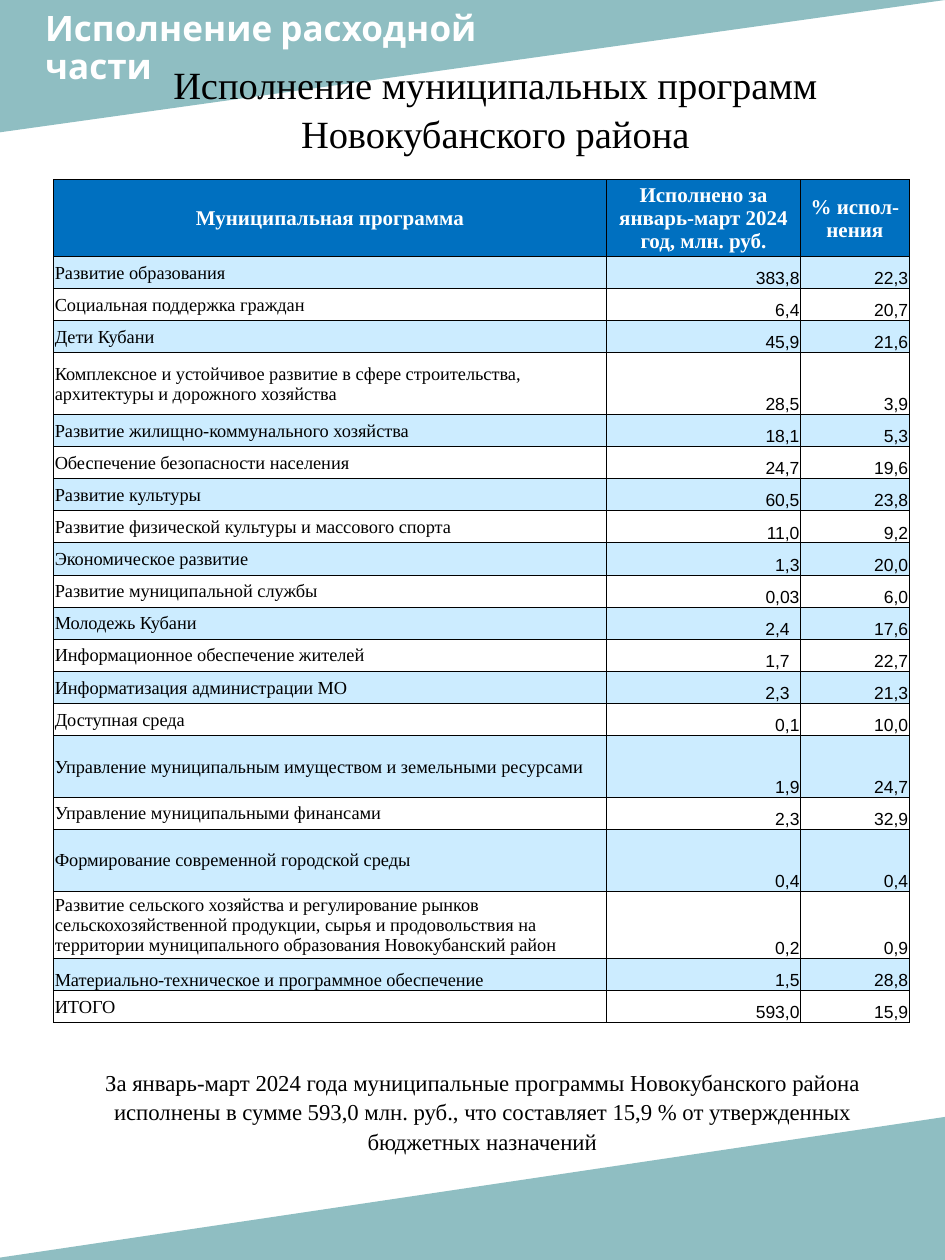
from lxml import etree
from pptx import Presentation
from pptx.dml.color import RGBColor
from pptx.enum import shapes, text
from pptx.oxml import ns
from pptx.util import Pt

TEAL = RGBColor(0x51, 0x9A, 0xA0)
BLUE = RGBColor(0x00, 0x70, 0xC0)
PALE_BLUE = RGBColor(0xCC, 0xEC, 0xFF)
WHITE = RGBColor(0xFF, 0xFF, 0xFF)
BLACK = RGBColor(0x00, 0x00, 0x00)

SERIF, SANS, HEADING = "Times New Roman", "Arial", "Cabin"
LEFT, CENTER, RIGHT = text.PP_ALIGN.LEFT, text.PP_ALIGN.CENTER, text.PP_ALIGN.RIGHT
MIDDLE, BOTTOM = text.MSO_ANCHOR.MIDDLE, text.MSO_ANCHOR.BOTTOM

COLUMN_WIDTHS = [316, 110.9, 62.1]
HEADER_HEIGHT, ROW_HEIGHT, TALL_HEIGHT, THREE_LINE_HEIGHT = 43.2, 18.35, 35.3, 38.2
CELL_MARGIN, INDENTED_MARGIN = 0.7, 6.3

HEADERS = [
    "Муниципальная программа",
    "Исполнено за январь-март 2024 год, млн. руб.",
    "% испол-нения",
]
PROGRAMS = [
    ("Развитие образования", "383,8", "22,3"),
    ("Социальная поддержка граждан", "6,4", "20,7"),
    ("Дети Кубани", "45,9", "21,6"),
    ("Комплексное и устойчивое развитие в сфере строительства, "
     "архитектуры и дорожного хозяйства", "28,5", "3,9"),
    ("Развитие жилищно-коммунального хозяйства", "18,1", "5,3"),
    ("Обеспечение безопасности населения", "24,7", "19,6"),
    ("Развитие культуры", "60,5", "23,8"),
    ("Развитие физической культуры и массового спорта", "11,0", "9,2"),
    ("Экономическое развитие", "1,3", "20,0"),
    ("Развитие муниципальной службы", "0,03", "6,0"),
    ("Молодежь Кубани", "2,4", "17,6"),
    ("Информационное обеспечение жителей", "1,7", "22,7"),
    ("Информатизация администрации МО", "2,3", "21,3"),
    ("Доступная среда", "0,1", "10,0"),
    ("Управление муниципальным имуществом и земельными ресурсами", "1,9", "24,7"),
    ("Управление муниципальными финансами", "2,3", "32,9"),
    ("Формирование современной городской среды", "0,4", "0,4"),
    ("Развитие сельского хозяйства и регулирование рынков сельскохозяйственной "
     "продукции, сырья и продовольствия на территории муниципального "
     "образования Новокубанский район", "0,2", "0,9"),
    ("Материально-техническое и программное обеспечение", "1,5", "28,8"),
    ("ИТОГО", "593,0", "15,9"),
]
# Table row numbers that differ from the rest
SPECIAL_HEIGHTS = {0: HEADER_HEIGHT, 4: TALL_HEIGHT, 15: TALL_HEIGHT,
                   17: TALL_HEIGHT, 18: THREE_LINE_HEIGHT}
INDENTED_ROWS = {11, 12, 13}
BOTTOM_NAME_ROW = 19


def format_text(frame, font, size, color, align, bold=False, spacing=None):
    for para in frame.paragraphs:
        para.alignment = align
        if spacing:
            para.line_spacing = spacing
        for span in para.runs:
            span.font.name = font
            span.font.size = Pt(size)
            span.font.bold = bold
            span.font.color.rgb = color


def add_text(page, left, top, width, height, wording, *style, **options):
    box = page.shapes.add_textbox(Pt(left), Pt(top), Pt(width), Pt(height))
    frame = box.text_frame
    frame.word_wrap = True
    frame.auto_size = text.MSO_AUTO_SIZE.SHAPE_TO_FIT_TEXT
    frame.text = wording
    format_text(frame, *style, **options)


def add_corner(page, left, top, width, height, flip):
    corner = page.shapes.add_shape(shapes.MSO_SHAPE.RIGHT_TRIANGLE,
                                   Pt(left), Pt(top), Pt(width), Pt(height))
    corner.shadow.inherit = False
    corner.rotation = 180
    corner.element.spPr.xfrm.set(flip, "1")
    corner.fill.solid()
    corner.fill.fore_color.rgb = TEAL
    color = corner.element.spPr.find(".//" + ns.qn("a:srgbClr"))
    etree.SubElement(color, ns.qn("a:alpha"), val="64000")
    corner.line.fill.background()


def set_borders(cell):
    properties = cell._tc.get_or_add_tcPr()
    for position, side in enumerate(("a:lnL", "a:lnR", "a:lnT", "a:lnB")):
        line = etree.Element(ns.qn(side), w=str(Pt(0.5)))
        fill = etree.SubElement(line, ns.qn("a:solidFill"))
        etree.SubElement(fill, ns.qn("a:srgbClr"), val=str(BLACK))
        properties.insert(position, line)


def fill_cell(cell, wording, fill, anchor, *style, right=CELL_MARGIN, **options):
    cell.text_frame.text = wording
    cell.vertical_anchor = anchor
    cell.margin_left = cell.margin_top = Pt(CELL_MARGIN)
    cell.margin_right, cell.margin_bottom = Pt(right), Pt(0)
    cell.fill.solid()
    cell.fill.fore_color.rgb = fill
    format_text(cell.text_frame, *style, **options)
    set_borders(cell)


def add_program_table(page, left, top):
    count = len(PROGRAMS) + 1
    heights = [SPECIAL_HEIGHTS.get(row, ROW_HEIGHT) for row in range(count)]
    table = page.shapes.add_table(count, len(HEADERS), Pt(left), Pt(top),
                                  Pt(sum(COLUMN_WIDTHS)), Pt(sum(heights))).table
    for column, width in zip(table.columns, COLUMN_WIDTHS):
        column.width = Pt(width)
    for row, height in zip(table.rows, heights):
        row.height = Pt(height)

    for column, header in enumerate(HEADERS):
        fill_cell(table.cell(0, column), header, BLUE, MIDDLE,
                  SERIF, 12, WHITE, CENTER, bold=True)

    for row, (name, amount, percent) in enumerate(PROGRAMS, start=1):
        fill = PALE_BLUE if row % 2 else WHITE
        anchor = BOTTOM if row == BOTTOM_NAME_ROW else MIDDLE
        margin = INDENTED_MARGIN if row in INDENTED_ROWS else CELL_MARGIN
        fill_cell(table.cell(row, 0), name, fill, anchor, SERIF, 10.5, BLACK, LEFT)
        fill_cell(table.cell(row, 1), amount, fill, BOTTOM,
                  SANS, 10, BLACK, RIGHT, right=margin)
        fill_cell(table.cell(row, 2), percent, fill, BOTTOM, SANS, 10, BLACK, RIGHT)


def main():
    deck = Presentation()
    deck.slide_width, deck.slide_height = Pt(540), Pt(720)
    page = deck.slides.add_slide(deck.slide_layouts[6])

    # Corner decoration
    add_corner(page, 0, 0, 540, 75.6, "flipH")
    add_corner(page, -9.4, 638, 550.8, 82, "flipV")

    # Headings
    add_text(page, 18.7, 2.9, 350.6, 55.4, "Исполнение расходной\nчасти",
             HEADING, 20, WHITE, LEFT, bold=True, spacing=0.9)
    add_text(page, 46.1, 29.5, 473.8, 59.8,
             "Исполнение муниципальных программ Новокубанского района",
             SERIF, 22, BLACK, CENTER, spacing=1.07)

    # Programs and summary
    add_program_table(page, 30.6, 102.6)
    add_text(page, 31, 606.2, 488.9, 54.7,
             "За январь-март 2024 года муниципальные программы Новокубанского района "
             "исполнены в сумме 593,0 млн. руб., что составляет 15,9 % от утвержденных "
             "бюджетных назначений", SERIF, 13, BLACK, CENTER, spacing=1.07)

    deck.save("out.pptx")


if __name__ == "__main__":
    main()
